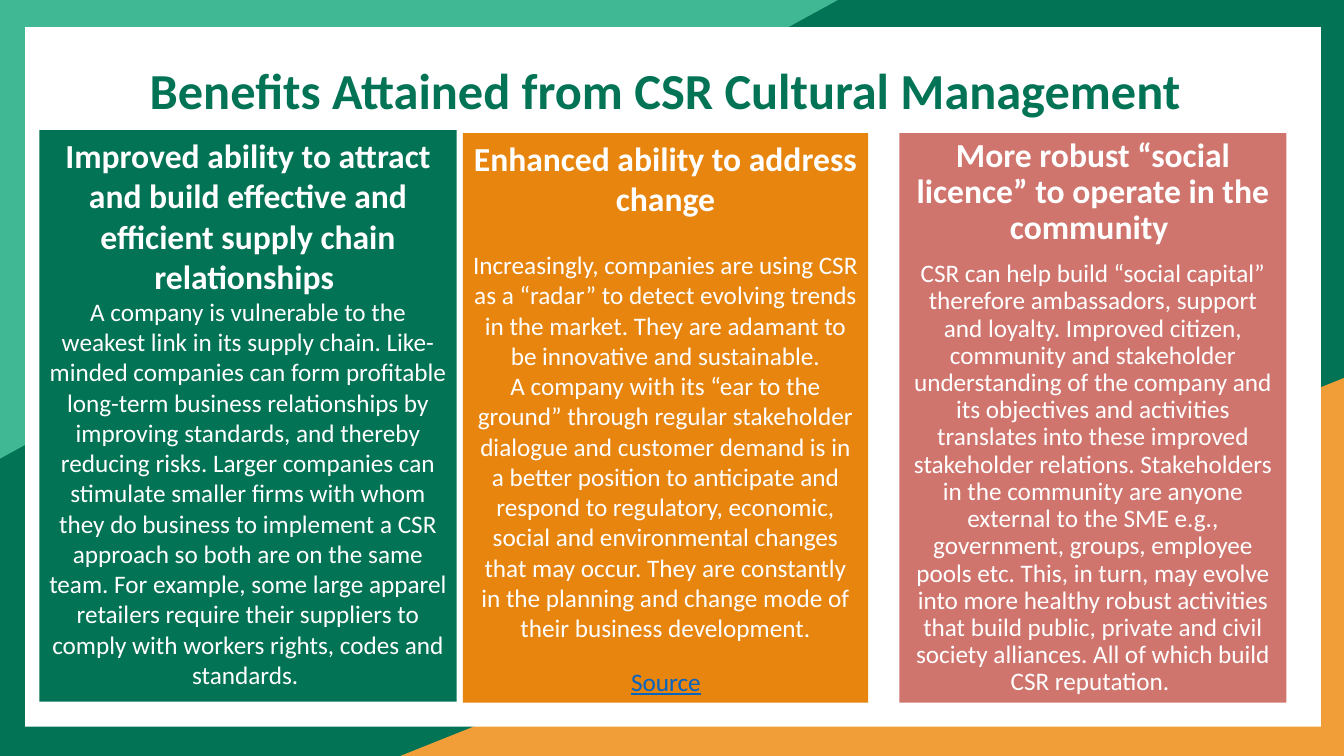
from dataclasses import dataclass

from pptx import Presentation
from pptx.dml.color import RGBColor
from pptx.enum.shapes import MSO_SHAPE
from pptx.enum.text import MSO_ANCHOR, PP_ALIGN
from pptx.util import Inches, Pt

RECT = MSO_SHAPE.RECTANGLE
TRIANGLE = MSO_SHAPE.RIGHT_TRIANGLE
CORNER = MSO_SHAPE.ISOSCELES_TRIANGLE
CENTER = PP_ALIGN.CENTER
TOP = MSO_ANCHOR.TOP


@dataclass(frozen=True)
class Theme:
    font: str = "Calibri"
    green: str = "027354"
    mint: str = "40B894"
    orange: str = "F29E38"
    amber: str = "E7850F"
    rose: str = "D0756E"
    white: str = "FFFFFF"
    link: str = "0563C1"
    title_size: int = 36
    heading_size: int = 24
    body_size: int = 18


THEME = Theme()
WIDTH, HEIGHT = 13.33, 7.5

# Each column: box, fill, line spacing, heading, gap below it (pt), body
COLUMNS = [
    ((0.39, 1.29, 4.14, 5.67), THEME.green, 1.0,
     "Improved ability to attract and build effective and efficient supply chain relationships ", 0,
     ["A company is vulnerable to the weakest link in its supply chain. Like-minded companies can "
      "form profitable long-term business relationships by improving standards, and thereby reducing "
      "risks. Larger companies can stimulate smaller firms with whom they do business to implement a "
      "CSR approach so both are on the same team. For example, some large apparel retailers require "
      "their suppliers to comply with workers rights, codes and standards. "]),
    ((4.59, 1.32, 4.02, 5.65), THEME.amber, 1.0,
     "Enhanced ability to address change", 22,
     ["Increasingly, companies are using CSR as a “radar” to detect evolving trends in the market. "
      "They are adamant to be innovative and sustainable.",
      "A company with its “ear to the ground” through regular stakeholder dialogue and customer "
      "demand is in a better position to anticipate and respond to regulatory, economic, social and "
      "environmental changes that may occur. They are constantly in the planning and change mode of "
      "their business development."]),
    ((8.92, 1.32, 3.84, 5.65), THEME.rose, 0.9,
     "More robust “social licence” to operate in the community ", 10,
     ["CSR can help build “social capital” therefore ambassadors, support and loyalty. Improved "
      "citizen, community and stakeholder understanding of the company and its objectives and "
      "activities translates into these improved stakeholder relations. Stakeholders in the community "
      "are anyone external to the SME e.g., government, groups, employee pools etc. This, in turn, may "
      "evolve into more healthy robust activities that build public, private and civil society "
      "alliances. All of which build CSR reputation. "]),
]


def add_block(slide, kind, box, fill):
    block = slide.shapes.add_shape(kind, *map(Inches, box))
    block.shadow.inherit = False
    block.fill.solid()
    block.fill.fore_color.rgb = RGBColor.from_string(fill)
    block.line.fill.background()
    return block


def write(paragraph, text, size=THEME.body_size, color=THEME.white, bold=False,
          underline=False, spacing=1.0, before=0):
    paragraph.alignment = CENTER
    paragraph.line_spacing = spacing
    paragraph.space_before = Pt(before)
    run = paragraph.add_run()
    run.text = text
    font = run.font
    font.name, font.size = THEME.font, Pt(size)
    font.bold, font.underline = bold, underline
    font.color.rgb = RGBColor.from_string(color)


def prepare_frame(shape):
    frame = shape.text_frame
    frame.word_wrap = True
    frame.vertical_anchor = TOP
    return frame


def add_label(slide, box, text, **style):
    label = slide.shapes.add_textbox(*map(Inches, box))
    write(prepare_frame(label).paragraphs[0], text, **style)


def add_backdrop(slide, width, height):
    add_block(slide, RECT, (0, 0, width, height), THEME.green)
    # Corner triangles, each with its right angle in a slide corner
    lower_corner = add_block(slide, CORNER, (3.97, height / 2, width - 3.97, height / 2), THEME.orange)
    upper_corner = add_block(slide, CORNER, (0, 0, 8.31, 4.55), THEME.mint)
    for corner in (lower_corner, upper_corner):
        corner.adjustments[0] = 1
    upper_corner.rotation = 180
    # White panel
    add_block(slide, RECT, (0.25, 0.27, 12.85, 6.94), THEME.white)


def add_column(slide, box, fill, spacing, heading, gap, body):
    frame = prepare_frame(add_block(slide, RECT, box, fill))
    write(frame.paragraphs[0], heading, size=THEME.heading_size, bold=True, spacing=spacing)
    for index, passage in enumerate(body):
        write(frame.add_paragraph(), passage, spacing=spacing, before=0 if index else gap)


def main():
    deck = Presentation()
    deck.slide_width, deck.slide_height = Inches(WIDTH), Inches(HEIGHT)
    slide = deck.slides.add_slide(deck.slide_layouts[6])

    add_backdrop(slide, WIDTH, HEIGHT)
    add_label(slide, (0.86, 0.42, 11.48, 1.23), "Benefits Attained from CSR Cultural Management",
              size=THEME.title_size, color=THEME.green, bold=True, spacing=1.2)
    for column in COLUMNS:
        add_column(slide, *column)
    add_label(slide, (5.45, 6.56, 2.31, 0.4), "Source", color=THEME.link, underline=True)

    deck.save("out.pptx")


if __name__ == "__main__":
    main()
